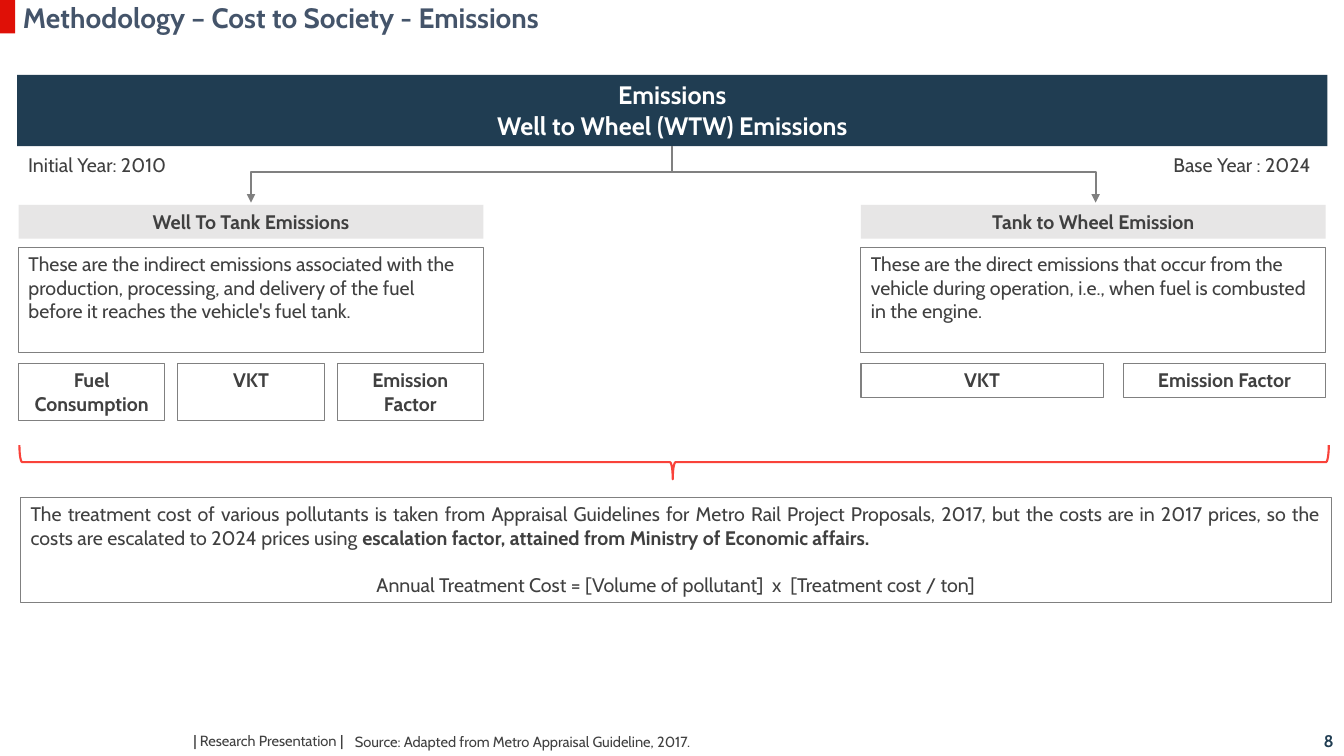
from dataclasses import dataclass
from lxml.etree import SubElement
from pptx import Presentation
from pptx.dml.color import RGBColor
from pptx.enum.shapes import MSO_CONNECTOR as Line, MSO_SHAPE as Preset
from pptx.enum.text import MSO_ANCHOR as Anchor, PP_ALIGN as Align
from pptx.oxml.ns import qn
from pptx.util import Pt

TITLE = "Methodology – Cost to Society - Emissions"
BANNER = ["Emissions", "Well to Wheel (WTW) Emissions"]
YEARS = [("Initial Year: 2010", 13), ("Base Year : 2024", 831)]
BRANCHES = [
    {
        "left": 13.3,
        "heading": "Well To Tank Emissions",
        "meaning": "These are the indirect emissions associated with the production, processing, "
                   "and delivery of the fuel before it reaches the vehicle's fuel tank.",
        "inputs": [("Fuel Consumption", 104.4), ("VKT", 104.4), ("Emission Factor", 104.4)],
        "input_height": 41,
    },
    {
        "left": 615,
        "heading": "Tank to Wheel Emission",
        "meaning": "These are the direct emissions that occur from the vehicle during operation, "
                   "i.e., when fuel is combusted in the engine.",
        "inputs": [("VKT", 173), ("Emission Factor", 144.6)],
        "input_height": 24.5,
    },
]
TREATMENT = [
    ("The treatment cost of various pollutants is taken from Appraisal Guidelines for Metro Rail "
     "Project Proposals, 2017, but the costs are in 2017 prices, so the costs are escalated to "
     "2024 prices using ", False),
    ("escalation factor, attained from Ministry of Economic affairs.", True),
]
FORMULA = "Annual Treatment Cost = [Volume of pollutant]  x  [Treatment cost / ton]"
FOOTER = [("|", True), (" Research Presentation ", False), ("|", True)]
SOURCE = "Source: Adapted from Metro Appraisal Guideline, 2017."
PAGE = "8"


@dataclass(frozen=True)
class Theme:
    font: str = "Cabin"
    navy: str = "203D52"
    slate: str = "44546A"
    ink: str = "404040"
    white: str = "FFFFFF"
    pale: str = "E7E6E6"
    grey: str = "808080"
    red: str = "DF1007"
    brace: str = "F9423A"
    title: float = 20
    banner: float = 18
    body: float = 14
    page: float = 12
    small: float = 10.5
    thin: float = 0.75
    thick: float = 1.5


theme = Theme()
BRANCH_WIDTH = 332
BANNER_LEFT, BANNER_TOP, BANNER_WIDTH, BANNER_HEIGHT = 12.2, 53.4, 936, 51
FORK_TOP, FORK_BOTTOM, FORK_ENDS = 123.1, 144.7, (179.3, 782.6)

deck = Presentation()
deck.slide_width, deck.slide_height = Pt(960), Pt(540)
slide = deck.slides.add_slide(deck.slide_layouts[5])
shapes = slide.shapes


def color(value):
    return RGBColor.from_string(value)


def style(paragraph, size=theme.body, ink=theme.ink, bold=None, align=Align.LEFT):
    paragraph.alignment = align
    font = paragraph.font
    font.name, font.size, font.bold = theme.font, Pt(size), bold
    font.color.rgb = color(ink)


def write(frame, paragraphs, **look):
    frame.word_wrap = True
    for index, content in enumerate(paragraphs):
        paragraph = frame.add_paragraph() if index else frame.paragraphs[0]
        if isinstance(content, str):
            paragraph.text = content
        else:
            for words, bold in content:
                run = paragraph.add_run()
                run.text, run.font.bold = words, bold
        style(paragraph, **look)


def outline(shape, ink, width):
    shape.line.color.rgb = color(ink)
    shape.line.width = Pt(width)


def block(left, top, width, height, fill=None, border=None, preset=Preset.RECTANGLE,
          weight=theme.thin):
    shape = shapes.add_shape(preset, Pt(left), Pt(top), Pt(width), Pt(height))
    shape.shadow.inherit = False
    if fill:
        shape.fill.solid()
        shape.fill.fore_color.rgb = color(fill)
    else:
        shape.fill.background()
    if border:
        outline(shape, border, weight)
    else:
        shape.line.fill.background()
    shape.text_frame.vertical_anchor = Anchor.TOP
    return shape


def label(left, top, width, height, paragraphs, anchor=Anchor.TOP, **look):
    frame = shapes.add_textbox(Pt(left), Pt(top), Pt(width), Pt(height)).text_frame
    frame.vertical_anchor = anchor
    write(frame, paragraphs, **look)


def add_title():
    title = shapes.title
    title.left, title.top, title.width, title.height = Pt(0), Pt(0), Pt(893.5), Pt(27.4)
    frame = title.text_frame
    frame.margin_left = Pt(16.4)
    frame.vertical_anchor = Anchor.MIDDLE
    write(frame, [TITLE], size=theme.title, ink=theme.slate, bold=True)
    frame.paragraphs[0].line_spacing = 0.9
    block(0, 0, 10.8, 23.8, fill=theme.red)


def add_fork():
    left, right = map(Pt, FORK_ENDS)
    top, bottom = Pt(FORK_TOP), Pt(FORK_BOTTOM)
    builder = shapes.build_freeform(left, bottom)
    builder.add_line_segments([(left, top), (right, top), (right, bottom)], close=False)
    fork = builder.convert_to_shape()
    fork.shadow.inherit = False
    fork.fill.background()
    outline(fork, theme.grey, theme.thick)
    for end in ("headEnd", "tailEnd"):
        SubElement(fork.line._get_or_add_ln(), qn(f"a:{end}"), type="triangle")
    stem_x = Pt(BANNER_LEFT + BANNER_WIDTH / 2)
    stem = shapes.add_connector(Line.STRAIGHT, stem_x, Pt(BANNER_TOP + BANNER_HEIGHT), stem_x, top)
    outline(stem, theme.grey, theme.thick)
    SubElement(stem._element.spPr, qn("a:effectLst"))


def add_branch(branch):
    left = branch["left"]
    heading = block(left, 146.3, BRANCH_WIDTH, 24.2, fill=theme.pale)
    write(heading.text_frame, [branch["heading"]], bold=True, align=Align.CENTER)
    meaning = block(left, 176.6, BRANCH_WIDTH, 75, border=theme.grey)
    write(meaning.text_frame, [branch["meaning"]])
    inputs = branch["inputs"]
    gap = (BRANCH_WIDTH - sum(width for _, width in inputs)) / (len(inputs) - 1)
    for name, width in inputs:
        box = block(left, 259.6, width, branch["input_height"], border=theme.grey)
        write(box.text_frame, [name], bold=True, align=Align.CENTER)
        left += width + gap


def add_treatment():
    span, depth, center_x, center_y = 935.3, 24.4, 481.5, 330.1
    brace = block(center_x - depth / 2, center_y - span / 2, depth, span,
                  border=theme.brace, preset=Preset.LEFT_BRACE, weight=theme.thick)
    brace.rotation = 270
    brace.adjustments[0], brace.adjustments[1] = 0.083, 0.499
    treatment = block(14.8, 355.2, 936, 75, border=theme.grey)
    write(treatment.text_frame, [TREATMENT, FORMULA], align=Align.JUSTIFY)
    formula = treatment.text_frame.paragraphs[1]
    formula.alignment = Align.CENTER
    formula.space_before = Pt(17)


add_title()
banner = block(BANNER_LEFT, BANNER_TOP, BANNER_WIDTH, BANNER_HEIGHT, fill=theme.navy)
write(banner.text_frame, BANNER, size=theme.banner, ink=theme.white, bold=True, align=Align.CENTER)
add_fork()
for year, year_left in YEARS:
    label(year_left, 105.8, 118, 24.2, [year])
for branch in BRANCHES:
    add_branch(branch)
add_treatment()
label(131, 518.4, 384.5, 21, [FOOTER], anchor=Anchor.MIDDLE, size=theme.small)
label(246.4, 520, 676, 20, [SOURCE], size=theme.small)
label(743.8, 518.4, 216, 21, [PAGE], size=theme.page, ink=theme.navy, bold=True, align=Align.RIGHT)

deck.save("out.pptx")
